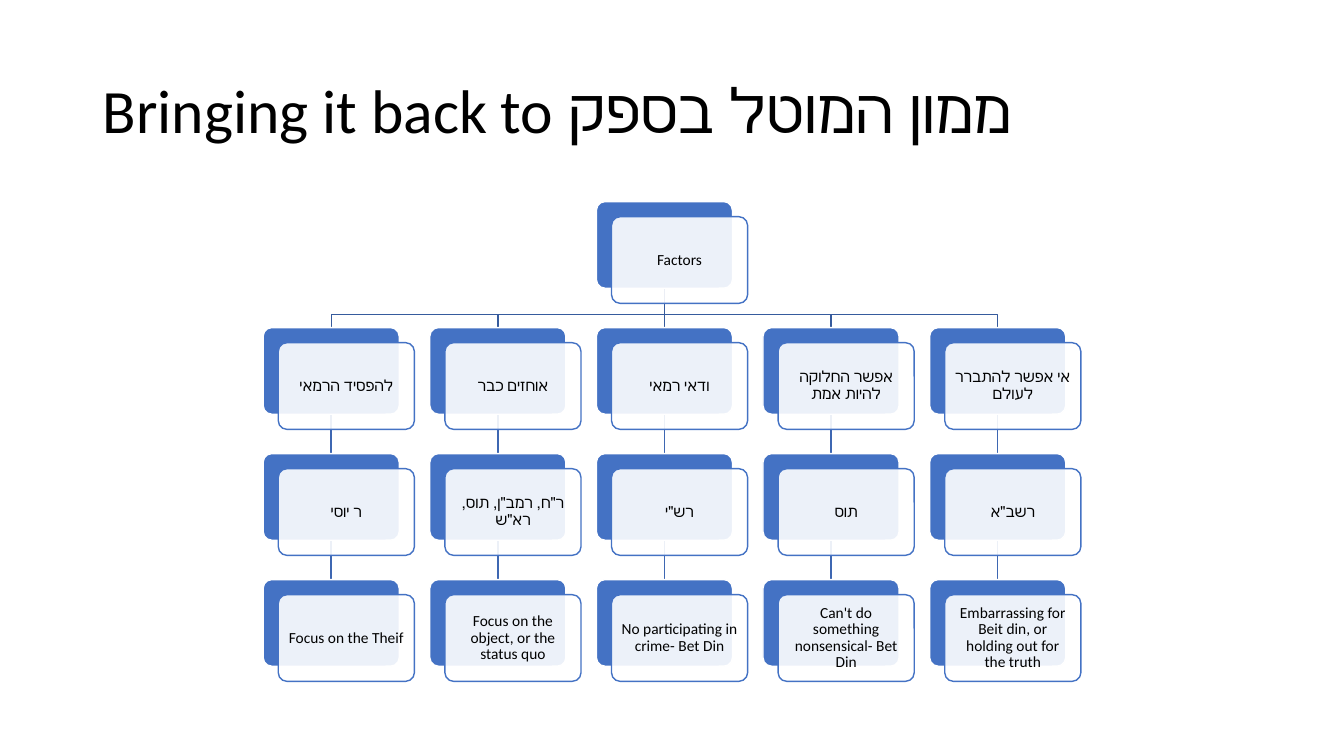
from lxml.etree import SubElement as Sub
from pptx import Presentation
from pptx.dml.color import RGBColor as Rgb
from pptx.enum.shapes import MSO_CONNECTOR as Conn, MSO_SHAPE as Kind
from pptx.enum.text import MSO_ANCHOR as Anchor, MSO_AUTO_SIZE as Fit, PP_ALIGN as Align
from pptx.oxml.ns import qn
from pptx.util import Inches, Pt

HUES = {"blue": "4472C4", "white": "FFFFFF", "black": "000000",
        "trunk": "365B9D", "branch": "3E67B2"}
LEFT, TOP = 2.61, 2
STEP, DROP = 6.61 / 4, 1.25
WIDE, HIGH = 1.35, 0.86
BEND = 0.26
MID = 2

ROOT = "Factors"
CHAINS = [
    ["להפסיד הרמאי", "ר יוסי", "Focus on the Theif"],
    ["אוחזים כבר", "ר\"ח, רמב\"ן, תוס, רא\"ש", "Focus on the object, or the status quo"],
    ["ודאי רמאי", "רש\"י", "No participating in crime- Bet Din"],
    ["אפשר החלוקה להיות אמת", "תוס", "Can't do something nonsensical- Bet Din"],
    ["אי אפשר להתברר לעולם", "רשב\"א", "Embarrassing for Beit din, or holding out for the truth"],
]


def hue(name):
    return Rgb.from_string(HUES[name])


def write(frame, text, size, align, **form):
    """Set text in one paragraph, with form holding the frame's attributes."""
    for key, val in form.items():
        setattr(frame, key, val)
    para = frame.paragraphs[0]
    para.text = text
    para.alignment, para.line_spacing = align, 0.9
    font = para.runs[0].font
    font.name, font.size, font.color.rgb = "Calibri", Pt(size), hue("black")
    return para


deck = Presentation()
deck.slide_width, deck.slide_height = Inches(13.33), Inches(7.5)
slide = deck.slides.add_slide(deck.slide_layouts[5])
shapes = slide.shapes

title = shapes.title
spot = {"left": 0.92, "top": 0.4, "width": 11.5, "height": 1.45}
for key, val in spot.items():
    setattr(title, key, Inches(val))
write(title.text_frame, "Bringing it back to ממון המוטל בספק", 44, Align.LEFT,
      vertical_anchor=Anchor.MIDDLE, auto_size=Fit.NONE, word_wrap=True)

# Links lie behind the cards
hub = LEFT + MID * STEP + WIDE / 2
for col in range(len(CHAINS)):
    x = LEFT + col * STEP + WIDE / 2
    for row in range(3):
        y, end = TOP + row * DROP + HIGH, TOP + (row + 1) * DROP
        if row == 0 and col != MID:
            pen = shapes.build_freeform(Inches(hub), Inches(y))
            bends = [(hub, y + BEND), (x, y + BEND), (x, end)]
            pen.add_line_segments([(Inches(a), Inches(b)) for a, b in bends], close=False)
            link = pen.convert_to_shape()
            link.fill.background()
            link.shadow.inherit = False
        else:
            link = shapes.add_connector(Conn.STRAIGHT, Inches(x), Inches(y), Inches(x), Inches(end))
        link.line.color.rgb = hue("branch" if row else "trunk")
        link.line.width = Pt(1)
        if row or col == MID:
            Sub(link._element.spPr, qn("a:effectLst"))

# Each card is a blue plate under a see-through white one
cards = [(MID, 0, ROOT)]
cards += [(col, row, text) for col, chain in enumerate(CHAINS)
          for row, text in enumerate(chain, 1)]
for col, row, text in cards:
    x, y = LEFT + col * STEP, TOP + row * DROP
    for shift, fill, edge in [(0, "blue", "white"), (0.15, "white", "blue")]:
        plate = shapes.add_shape(Kind.ROUNDED_RECTANGLE, Inches(x + shift), Inches(y + shift),
                                 Inches(WIDE), Inches(HIGH))
        plate.adjustments[0] = 0.1
        plate.shadow.inherit = False
        plate.fill.solid()
        plate.fill.fore_color.rgb = hue(fill)
        plate.line.color.rgb = hue(edge)
        plate.line.width = Pt(1)
    tint = plate._element.spPr.find(qn("a:solidFill"))[0]
    Sub(tint, qn("a:alpha")).set("val", "90000")
    pad = dict.fromkeys(["margin_left", "margin_right", "margin_top", "margin_bottom"], Inches(0.07))
    para = write(plate.text_frame, text, 11, Align.CENTER,
                 vertical_anchor=Anchor.MIDDLE, word_wrap=True, **pad)
    para._p.get_or_add_pPr().set("rtl", "1")

deck.save("out.pptx")
